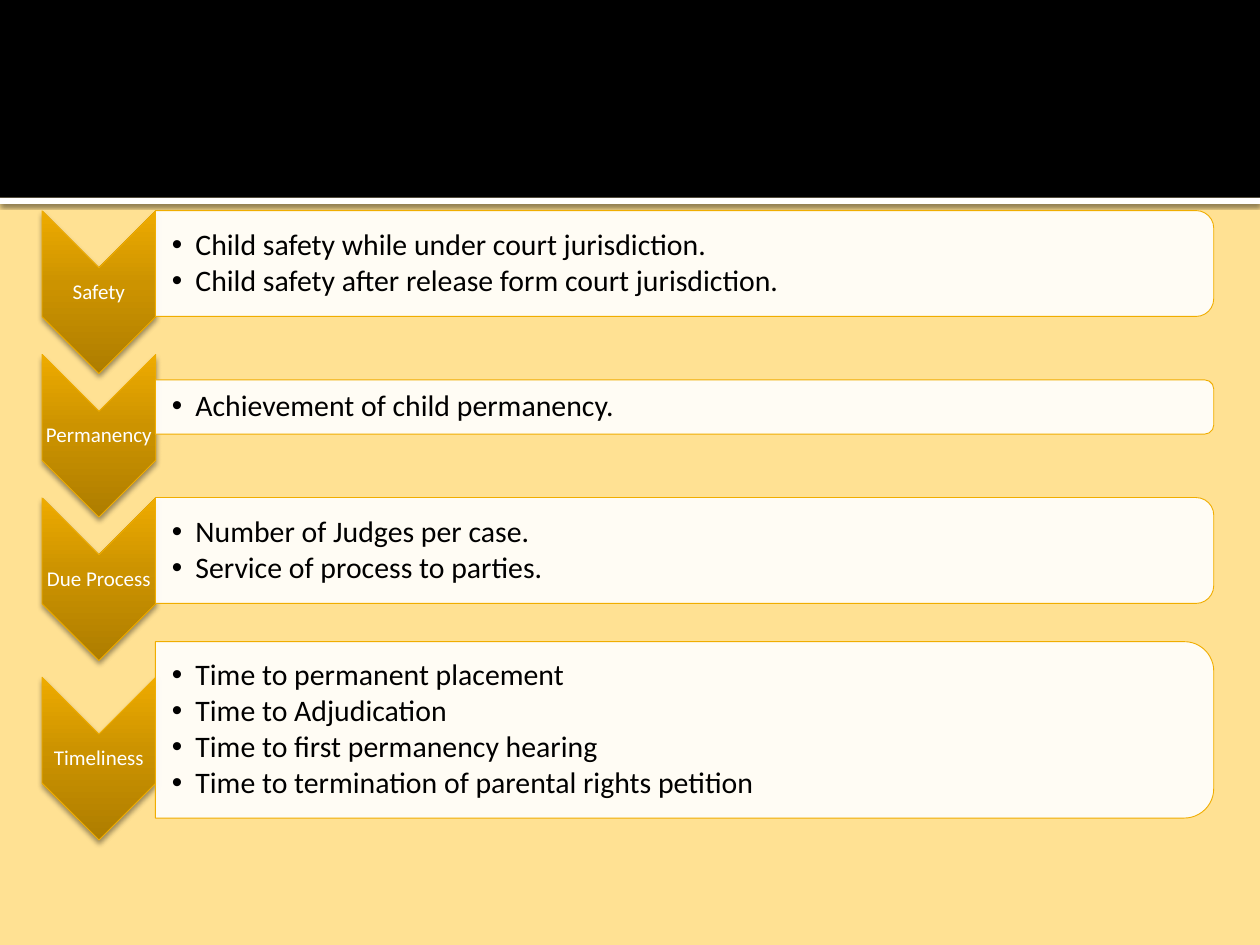
import pptx
import pptx.util
import pptx.dml.color
import pptx.enum.shapes
import pptx.enum.text
import pptx.oxml
import pptx.oxml.ns
import lxml.etree

Pt = pptx.util.Pt
RGBColor = pptx.dml.color.RGBColor
Shape = pptx.enum.shapes.MSO_SHAPE
Align = pptx.enum.text.PP_ALIGN

BLACK = RGBColor(0x00, 0x00, 0x00)
WHITE = RGBColor(0xFF, 0xFF, 0xFF)
CREAM = RGBColor(0xFF, 0xE1, 0x93)
GOLD = RGBColor(0xF0, 0xAD, 0x00)
GRADIENT = [
    (0, RGBColor(0xAE, 0x7D, 0x00)),
    (55, RGBColor(0xCC, 0x93, 0x00)),
    (100, RGBColor(0xEE, 0xAB, 0x00)),
]

PAGE_WIDTH, PAGE_HEIGHT = 720, 540
BAND_HEIGHT, RULE_HEIGHT = 113, 3.6
CHEVRON_LENGTH, CHEVRON_WIDTH = 93, 65
CHEVRON_CENTER = 56.5
BAR_LEFT, BAR_WIDTH, BAR_RISE = 88.75, 604.8, 16.4
LABEL_HEIGHT = 28

# Label, vertical centre of the chevron, bar height, list items
ROWS = [
    ("Safety", 167, 60.5, [
        "Child safety while under court jurisdiction.",
        "Child safety after release form court jurisdiction.",
    ]),
    ("Permanency", 249, 31, ["Achievement of child permanency."]),
    ("Due Process", 331, 60.5, [
        "Number of Judges per case.",
        "Service of process to parties.",
    ]),
    ("Timeliness", 433.5, 100.8, [
        "Time to permanent placement",
        "Time to Adjudication",
        "Time to first permanency hearing",
        "Time to termination of parental rights petition",
    ]),
]

LABEL_FONT = {"name": "Calibri", "size": Pt(12), "bold": False}
LIST_FONT = {"name": "Calibri", "size": Pt(17), "bold": False}
LABEL_PARAGRAPH = {"alignment": Align.CENTER, "line_spacing": 0.9}
LIST_PARAGRAPH = {
    "alignment": Align.LEFT, "line_spacing": 0.9,
    "space_before": Pt(0), "space_after": Pt(2.25),
}
FRAME = {
    "word_wrap": True,
    "auto_size": pptx.enum.text.MSO_AUTO_SIZE.NONE,
    "vertical_anchor": pptx.enum.text.MSO_ANCHOR.MIDDLE,
    "margin_left": Pt(0.7), "margin_right": Pt(0.7),
    "margin_top": Pt(0.7), "margin_bottom": Pt(0.7),
}


def apply_format(target, values):
    for name, value in values.items():
        setattr(target, name, value)


def place(shape, left, top, width, height):
    apply_format(shape, {
        "left": Pt(left), "top": Pt(top),
        "width": Pt(width), "height": Pt(height),
    })


def add_shape(page, kind, left, top, width, height, fill=None, line=None):
    shape = page.shapes.add_shape(
        kind, Pt(left), Pt(top), Pt(width), Pt(height))
    shape.shadow.inherit = False
    if fill is not None:
        shape.fill.solid()
        shape.fill.fore_color.rgb = fill
    if line is None:
        shape.line.fill.background()
    else:
        shape.line.color.rgb = line
        shape.line.width = Pt(0.5)
    return shape


def add_turned_shape(page, kind, center_x, center_y, length, width, fill=None):
    """Add an outlined shape turned a quarter clockwise about its centre."""
    shape = add_shape(page, kind, center_x - length / 2, center_y - width / 2,
                      length, width, fill, GOLD)
    shape.rotation = 90
    return shape


def set_shadow(shape, opacity, blur, distance):
    effects = shape._element.spPr.find(pptx.oxml.ns.qn("a:effectLst"))
    effects.append(pptx.oxml.parse_xml(
        f'<a:outerShdw {pptx.oxml.ns.nsdecls("a")} blurRad="{Pt(blur)}" '
        f'dist="{Pt(distance)}" dir="5400000" rotWithShape="0">'
        f'<a:srgbClr val="{BLACK}"><a:alpha val="{opacity * 1000}"/>'
        f'</a:srgbClr></a:outerShdw>'))


def set_gradient(shape):
    stops = "".join(
        f'<a:gs pos="{position * 1000}"><a:srgbClr val="{color}"/></a:gs>'
        for position, color in GRADIENT)
    gradient = pptx.oxml.parse_xml(
        f'<a:gradFill {pptx.oxml.ns.nsdecls("a")} rotWithShape="0">'
        f'<a:gsLst>{stops}</a:gsLst><a:lin ang="16200000" scaled="0"/>'
        f'</a:gradFill>')
    shape._element.spPr.find(pptx.oxml.ns.qn("a:prstGeom")).addnext(gradient)


def set_opacity(shape, percent):
    color = shape._element.spPr.find(".//" + pptx.oxml.ns.qn("a:srgbClr"))
    alpha = lxml.etree.SubElement(color, pptx.oxml.ns.qn("a:alpha"))
    alpha.set("val", str(percent * 1000))


def set_bullet(para):
    properties = para._p.get_or_add_pPr()
    properties.set("marL", str(Pt(13.5)))
    properties.set("indent", str(Pt(-13.5)))
    bullet = lxml.etree.SubElement(properties, pptx.oxml.ns.qn("a:buChar"))
    bullet.set("char", "•")


def write_text(box, lines, font, color, paragraph, bulleted=False):
    frame = box.text_frame
    apply_format(frame, FRAME)
    for index, line in enumerate(lines):
        para = frame.add_paragraph() if index else frame.paragraphs[0]
        apply_format(para, paragraph)
        if bulleted:
            set_bullet(para)
        span = para.add_run()
        span.text = line
        apply_format(span.font, font)
        span.font.color.rgb = color


def add_header(page):
    rule = add_shape(page, Shape.RECTANGLE, 0, BAND_HEIGHT,
                     PAGE_WIDTH, RULE_HEIGHT, WHITE)
    set_shadow(rule, 60, 2.5, 0.8)
    add_shape(page, Shape.RECTANGLE, 0, 0, PAGE_WIDTH, BAND_HEIGHT, BLACK)


def add_row(page, body, label, center, bar_height, items):
    # Chevron with its label
    chevron = add_turned_shape(page, Shape.CHEVRON, CHEVRON_CENTER, center,
                               CHEVRON_LENGTH, CHEVRON_WIDTH)
    set_gradient(chevron)
    set_shadow(chevron, 38, 3.1, 2)
    box = page.shapes.add_textbox(
        Pt(CHEVRON_CENTER - CHEVRON_WIDTH / 2), Pt(center - LABEL_HEIGHT / 2),
        Pt(CHEVRON_WIDTH), Pt(LABEL_HEIGHT))
    write_text(box, [label], LABEL_FONT, WHITE, LABEL_PARAGRAPH)

    # Bar with its list, in front of the bar
    bar_center = center - BAR_RISE
    bar = add_turned_shape(page, Shape.ROUND_2_SAME_RECTANGLE,
                           BAR_LEFT + BAR_WIDTH / 2, bar_center,
                           bar_height, BAR_WIDTH, WHITE)
    set_opacity(bar, 90)
    list_height = bar_height - 5
    place(body, BAR_LEFT, bar_center - list_height / 2,
          BAR_WIDTH - 3, list_height)
    write_text(body, items, LIST_FONT, BLACK, LIST_PARAGRAPH, bulleted=True)
    body.text_frame.margin_left = Pt(9.4)
    bar._element.addnext(body._element)


def main():
    deck = pptx.Presentation()
    deck.slide_width, deck.slide_height = Pt(PAGE_WIDTH), Pt(PAGE_HEIGHT)
    # The comparison layout has four body placeholders, one for each list
    page = deck.slides.add_slide(deck.slide_layouts[4])
    page.background.fill.solid()
    page.background.fill.fore_color.rgb = CREAM
    title, *bodies = page.placeholders
    title._element.getparent().remove(title._element)

    add_header(page)
    for body, row in zip(bodies, ROWS):
        add_row(page, body, *row)
    deck.save("out.pptx")


if __name__ == "__main__":
    main()
